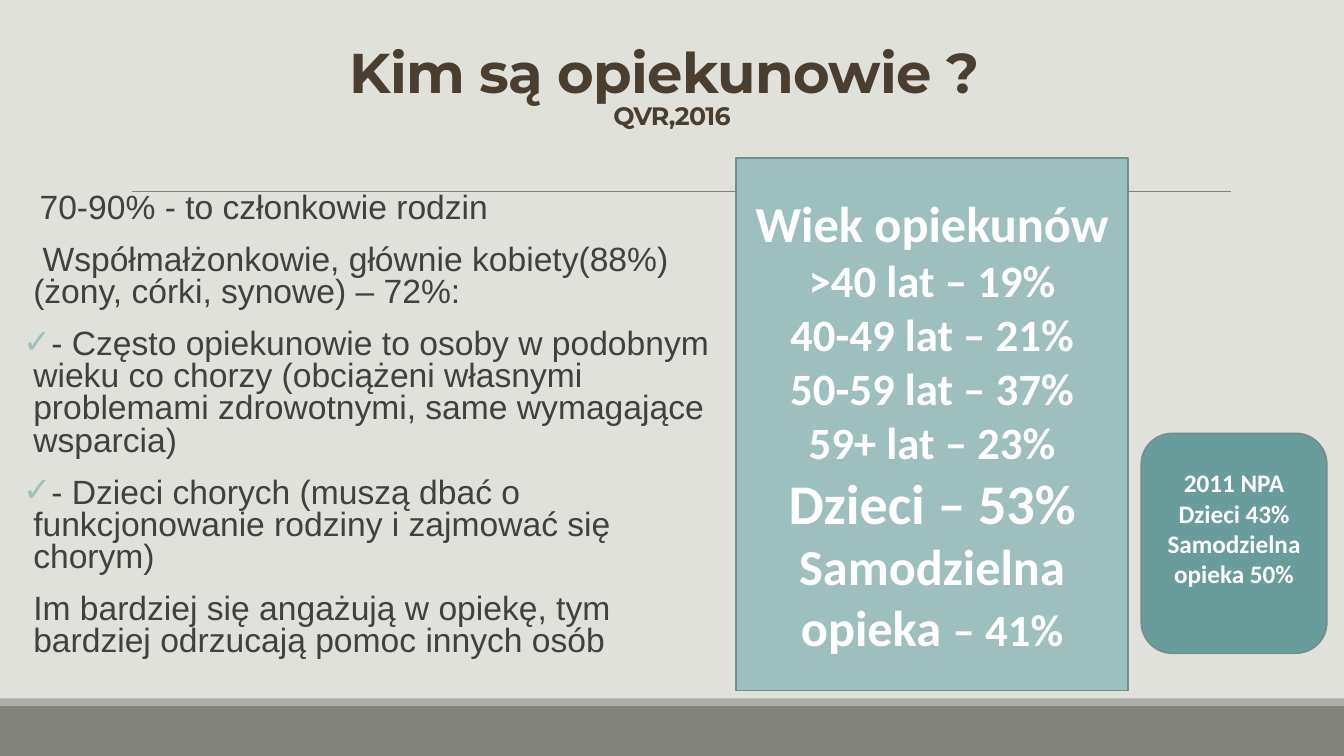
from lxml.etree import SubElement
from pptx import Presentation
from pptx.dml.color import RGBColor
from pptx.enum.shapes import MSO_CONNECTOR as Connector, MSO_SHAPE as Shape
from pptx.enum.text import MSO_ANCHOR as Anchor, MSO_AUTO_SIZE as AutoSize, PP_ALIGN as Align
from pptx.oxml.ns import qn
from pptx.util import Inches, Pt

TEAL, DARK_TEAL, BORDER = "9DBFBE", "689D9B", "748D8D"
WHITE, BROWN, GREY = "FFFFFF", "493E30", "404040"

BODY_ITEMS = [
    (" ", "70-90% - to członkowie rodzin"),
    (" ", " Współmałżonkowie, głównie kobiety(88%) (żony, córki, synowe) – 72%:"),
    ("✓", "- Często opiekunowie to osoby w podobnym wieku co chorzy "
          "(obciążeni własnymi problemami zdrowotnymi, same wymagające wsparcia)"),
    ("✓", "- Dzieci chorych (muszą dbać o funkcjonowanie rodziny i zajmować się chorym)"),
    (" ", "Im bardziej się angażują w opiekę, tym bardziej odrzucają pomoc innych osób"),
]
AGE_LINES = [
    [("Wiek opiekunów", 36)],
    [(">40 lat – 19%", 32)],
    [("40-49 lat – 21%", 32)],
    [("50-59 lat – 37%", 32)],
    [("59+ lat – 23%", 32)],
    [("Dzieci – 53%", 40)],
    [("Samodzielna opieka ", 36), ("– 41%", 32)],
]
SURVEY_LINES = [[(line, 18)] for line in ("2011 NPA", "Dzieci 43%", "Samodzielna opieka 50%")]


def color(value):
    """Turn a hex string into a colour."""
    return RGBColor.from_string(value)


def add_text(para, text, size, font="Calibri", fill=WHITE, bold=False, spacing=None):
    """Add one formatted span of text to a paragraph."""
    span = para.add_run()
    span.text = text
    span.font.size = Pt(size)
    span.font.name = font
    span.font.bold = bold
    span.font.color.rgb = color(fill)
    if spacing is not None:
        span.font._element.set("spc", str(int(spacing * 100)))


def next_para(frame, index):
    """Return the first paragraph of a frame, or a new one after it."""
    return frame.add_paragraph() if index else frame.paragraphs[0]


def place(box, left, top, width, height):
    """Move and size a box in inches."""
    box.left, box.top = Inches(left), Inches(top)
    box.width, box.height = Inches(width), Inches(height)


def add_box(page, kind, area, fill, border=None):
    """Add a filled preset shape."""
    box = page.shapes.add_shape(kind, *map(Inches, area))
    box.shadow.inherit = False
    box.fill.solid()
    box.fill.fore_color.rgb = color(fill)
    if border:
        box.line.color.rgb = color(border)
        box.line.width = Pt(1.25)
    else:
        box.line.fill.background()
    return box


def add_panel(page, kind, area, fill, lines, bottom=0.05):
    """Add a bordered shape with centred bold lines."""
    frame = add_box(page, kind, area, fill, BORDER).text_frame
    frame.word_wrap = True
    frame.vertical_anchor = Anchor.MIDDLE
    frame.margin_bottom = Inches(bottom)
    for index, spans in enumerate(lines):
        para = next_para(frame, index)
        para.alignment = Align.CENTER
        for text, size in spans:
            add_text(para, text, size, bold=True)


def add_rule(page, left, right, top):
    """Add the thin horizontal line under the title."""
    rule = page.shapes.add_connector(
        Connector.STRAIGHT, Inches(left), Inches(top), Inches(right), Inches(top))
    rule.line.color.rgb = color("808080")
    rule.line.width = Pt(0.5)
    SubElement(rule._element.spPr, qn("a:effectLst"))


def set_bullet(para, symbol):
    """Give a paragraph a hanging teal bullet."""
    props = para._p.get_or_add_pPr()
    props.set("marL", str(Inches(0.1)))
    props.set("indent", str(-Inches(0.1)))
    SubElement(SubElement(props, qn("a:buClr")), qn("a:srgbClr"), val=TEAL)
    SubElement(props, qn("a:buFont"), typeface="Calibri")
    SubElement(props, qn("a:buChar"), char=symbol)


def fill_title(title):
    """Write the heading and its source line."""
    place(title, 2.14, 0.11, 9.05, 1.24)
    frame = title.text_frame
    frame.auto_size = AutoSize.NONE
    frame.vertical_anchor = Anchor.BOTTOM
    para = frame.paragraphs[0]
    para.alignment = Align.CENTER
    para.line_spacing = 0.85
    style = {"font": "Montserrat", "fill": BROWN, "bold": True, "spacing": -0.5}
    add_text(para, "Kim są opiekunowie ? ", 40, **style)
    para.add_line_break()
    add_text(para, "QVR,2016", 18, **style)


def fill_body(body):
    """Write the list of facts about carers."""
    place(body, 0.23, 1.87, 6.86, 5.16)
    frame = body.text_frame
    frame.auto_size = AutoSize.NONE
    frame.margin_left = frame.margin_right = 0
    for index, (symbol, text) in enumerate(BODY_ITEMS):
        para = next_para(frame, index)
        para.line_spacing = 0.8
        para.space_before, para.space_after = Pt(12), Pt(2)
        set_bullet(para, symbol)
        if index == 0:
            add_text(para, " ", 20, fill=GREY)
        add_text(para, text, 24, font="Arial", fill=GREY)


def main():
    """Build the slide and save it."""
    deck = Presentation()
    deck.slide_width, deck.slide_height = Inches(13.33), Inches(7.5)
    page = deck.slides.add_slide(deck.slide_layouts[1])
    page.background.fill.solid()
    page.background.fill.fore_color.rgb = color("E1E1DB")
    add_box(page, Shape.RECTANGLE, (0, 7, 13.33, 0.5), "82847C")
    add_box(page, Shape.RECTANGLE, (0, 6.93, 13.33, 0.07), "ACADA8")
    add_rule(page, 1.31, 12.21, 1.9)
    fill_title(page.shapes.title)
    fill_body(page.placeholders[1])
    add_panel(page, Shape.RECTANGLE, (7.3, 1.57, 3.89, 5.28), TEAL, AGE_LINES)
    add_panel(page, Shape.ROUNDED_RECTANGLE, (11.32, 4.3, 1.84, 2.18), DARK_TEAL,
              SURVEY_LINES, bottom=0.35)
    deck.save("out.pptx")


if __name__ == "__main__":
    main()
